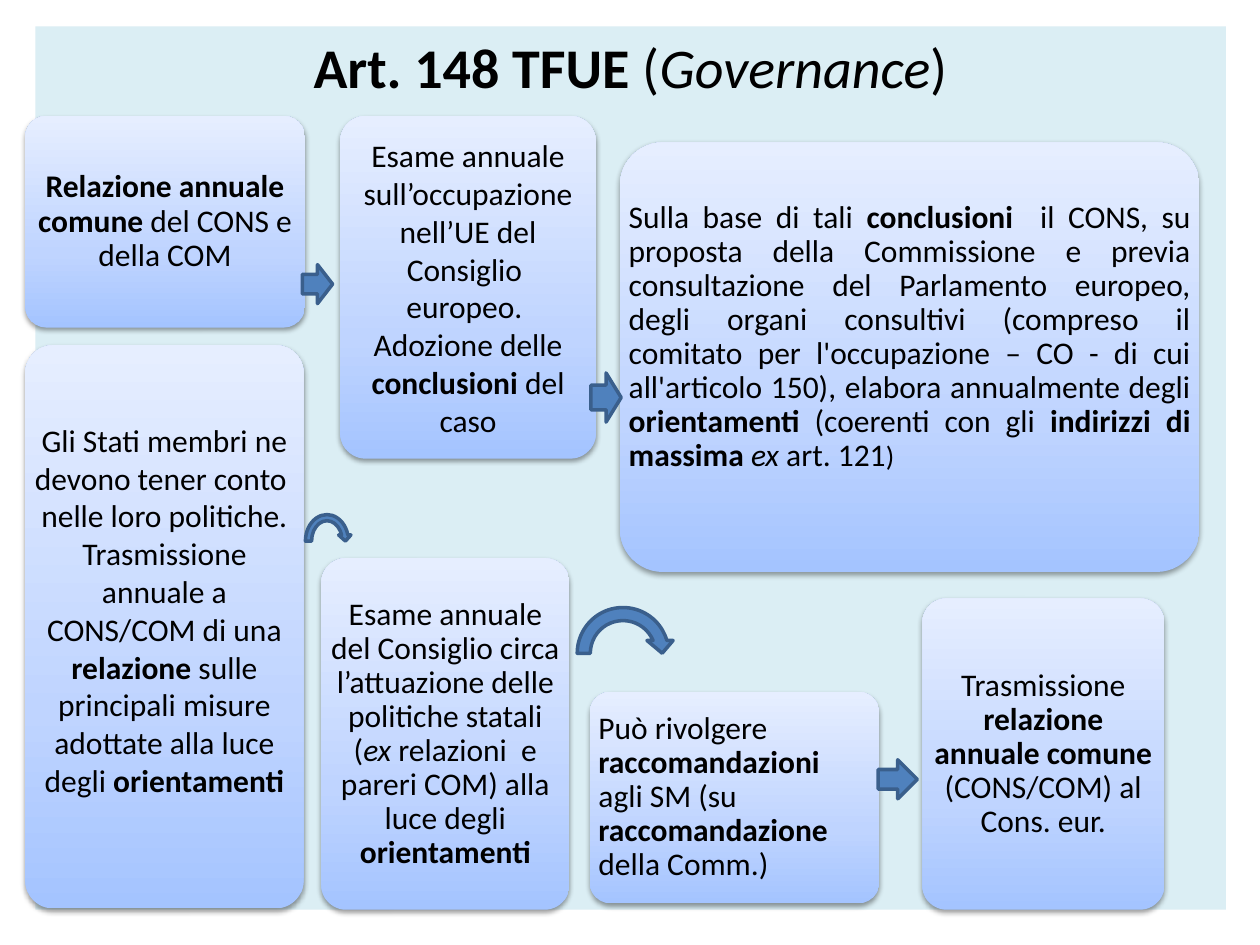
from dataclasses import dataclass

from lxml import etree
from pptx import Presentation
from pptx import util as u
from pptx.dml.color import RGBColor
from pptx.enum import shapes, text
from pptx.oxml import ns


@dataclass(frozen=True)
class Theme:
    font: str = "Calibri"
    ink: str = "000000"
    panel: str = "DBEEF4"
    arrow: str = "4F81BD"
    arrow_line: str = "3A5F8C"
    gradient: tuple = ((0, "A4C4FF"), (35, "BFD4FF"), (100, "E6EEFF"))
    title_size: int = 32
    body_size: int = 18
    small_size: int = 16
    inset: float = 0.07


@dataclass(frozen=True)
class Span:
    words: str
    bold: bool = False
    italic: bool = False
    size: int = 0


@dataclass(frozen=True)
class Area:
    left: float
    top: float
    width: float
    height: float

    def lengths(self) -> tuple:
        return tuple(u.Inches(n) for n in (self.left, self.top, self.width, self.height))


@dataclass(frozen=True)
class Card:
    area: Area
    spans: tuple
    align: text.PP_ALIGN = text.PP_ALIGN.CENTER
    spacing: float = 0.9
    room_below: float = 0


@dataclass(frozen=True)
class Arrow:
    kind: shapes.MSO_SHAPE
    area: Area


THEME = Theme()
STRAIGHT = shapes.MSO_SHAPE.RIGHT_ARROW
CURVED = shapes.MSO_SHAPE.CIRCULAR_ARROW

TITLE = (Span("Art. 148 TFUE", bold=True), Span(" ("),
         Span("Governance", italic=True), Span(")"))

CARDS = (
    Card(Area(0.2, 0.92, 2.22, 1.68), (
        Span("Relazione annuale comune", bold=True),
        Span(" del CONS e della COM"))),
    Card(Area(0.2, 2.74, 2.21, 4.47), (
        Span("Gli Stati membri ne devono tener conto  nelle loro politiche. "
             "Trasmissione annuale a CONS/COM di una "),
        Span("relazione ", bold=True),
        Span("sulle principali misure adottate alla luce degli "),
        Span("orientamenti", bold=True)), spacing=1.0, room_below=0.27),
    Card(Area(2.7, 0.92, 2.03, 2.72), (
        Span("Esame annuale sull’occupazione nell’UE del Consiglio  europeo.  "
             "Adozione delle "),
        Span("conclusioni", bold=True),
        Span(" del caso")), spacing=1.0),
    Card(Area(2.55, 4.43, 1.97, 2.79), (
        Span("Esame annuale del Consiglio circa l’attuazione delle politiche statali ("),
        Span("ex", italic=True),
        Span(" relazioni  e pareri COM) alla luce degli "),
        Span("orientamenti", bold=True))),
    Card(Area(4.92, 1.13, 4.6, 3.41), (
        Span("Sulla base di tali "),
        Span("conclusioni", bold=True),
        Span("  il CONS, su proposta della Commissione e previa consultazione del "
             "Parlamento europeo, degli organi consultivi (compreso il comitato per "
             "l'occupazione – CO - di cui all'articolo 150), elabora annualmente degli "),
        Span("orientamenti ", bold=True),
        Span("(coerenti con gli "),
        Span("indirizzi di massima ", bold=True),
        Span("ex ", italic=True),
        Span("art. 121"),
        Span(")", size=THEME.small_size)),
        align=text.PP_ALIGN.JUSTIFY, room_below=0.32),
    Card(Area(4.68, 5.49, 2.3, 1.68), (
        Span("Può rivolgere "),
        Span("raccomandazioni ", bold=True),
        Span("agli SM (su "),
        Span("raccomandazione", bold=True),
        Span(" della Comm.)")), align=text.PP_ALIGN.LEFT),
    Card(Area(7.32, 4.75, 1.92, 2.47), (
        Span("Trasmissione "),
        Span("relazione annuale comune", bold=True),
        Span(" (CONS/COM) al Cons. eur."))),
)

ARROWS = (
    Arrow(STRAIGHT, Area(4.69, 2.96, 0.24, 0.39)),
    Arrow(STRAIGHT, Area(2.4, 2.1, 0.24, 0.31)),
    Arrow(CURVED, Area(2.4, 4.06, 0.39, 0.47)),
    Arrow(CURVED, Area(4.53, 4.77, 0.83, 0.83)),
    Arrow(STRAIGHT, Area(6.97, 6.03, 0.31, 0.31)),
)


def color(value: str) -> RGBColor:
    return RGBColor.from_string(value)


def write_spans(para, spans: tuple, size: int) -> None:
    for item in spans:
        span = para.add_run()
        span.text = item.words
        span.font.name = THEME.font
        span.font.size = u.Pt(item.size or size)
        span.font.bold = item.bold
        span.font.italic = item.italic
        span.font.color.rgb = color(THEME.ink)


def add_figure(page, kind: shapes.MSO_SHAPE, area: Area):
    figure = page.shapes.add_shape(kind, *area.lengths())
    figure.shadow.inherit = False
    return figure


def add_child(parent, tag: str, **values):
    attributes = {name: str(value) for name, value in values.items()}
    return etree.SubElement(parent, ns.qn(tag), attributes)


def fill_gradient(figure) -> None:
    figure.fill.gradient()
    figure.fill.gradient_angle = 90
    stops = figure.element.spPr.find(".//" + ns.qn("a:gsLst"))
    for stop in list(stops):
        stops.remove(stop)
    for percent, value in THEME.gradient:
        add_child(add_child(stops, "a:gs", pos=percent * 1000), "a:srgbClr", val=value)


def cast_shadow(figure) -> None:
    effects = figure.element.spPr.find(ns.qn("a:effectLst"))
    shadow = add_child(effects, "a:outerShdw", blurRad=u.Pt(3.1), dist=u.Pt(1.6),
                       dir=90 * 60000, rotWithShape=0)
    tint = add_child(shadow, "a:srgbClr", val=THEME.ink)
    add_child(tint, "a:alpha", val=38000)


def draw_panel(page, area: Area) -> None:
    panel = add_figure(page, shapes.MSO_SHAPE.RECTANGLE, area)
    panel.fill.solid()
    panel.fill.fore_color.rgb = color(THEME.panel)
    panel.line.fill.background()
    frame = panel.text_frame
    frame.word_wrap = True
    frame.vertical_anchor = text.MSO_ANCHOR.TOP
    para = frame.paragraphs[0]
    para.alignment = text.PP_ALIGN.CENTER
    write_spans(para, TITLE, THEME.title_size)


def draw_card(page, card: Card) -> None:
    figure = add_figure(page, shapes.MSO_SHAPE.ROUNDED_RECTANGLE, card.area)
    figure.adjustments[0] = 0.1
    fill_gradient(figure)
    figure.line.fill.background()
    cast_shadow(figure)

    frame = page.shapes.add_textbox(*card.area.lengths()).text_frame
    frame.word_wrap = True
    frame.vertical_anchor = text.MSO_ANCHOR.MIDDLE
    frame.margin_left = frame.margin_right = frame.margin_top = u.Inches(THEME.inset)
    frame.margin_bottom = u.Inches(THEME.inset + card.room_below)
    para = frame.paragraphs[0]
    para.alignment = card.align
    para.line_spacing = card.spacing
    write_spans(para, card.spans, THEME.body_size)


def draw_arrow(page, arrow: Arrow) -> None:
    figure = add_figure(page, arrow.kind, arrow.area)
    figure.fill.solid()
    figure.fill.fore_color.rgb = color(THEME.arrow)
    figure.line.color.rgb = color(THEME.arrow_line)
    figure.line.width = u.Pt(2)


def main() -> None:
    deck = Presentation()
    deck.slide_width, deck.slide_height = u.Inches(10), u.Inches(7.5)
    page = deck.slides.add_slide(deck.slide_layouts[6])
    draw_panel(page, Area(0.28, 0.21, 9.45, 7.01))
    for card in CARDS:
        draw_card(page, card)
    for arrow in ARROWS:
        draw_arrow(page, arrow)
    deck.save("out.pptx")


if __name__ == "__main__":
    main()
